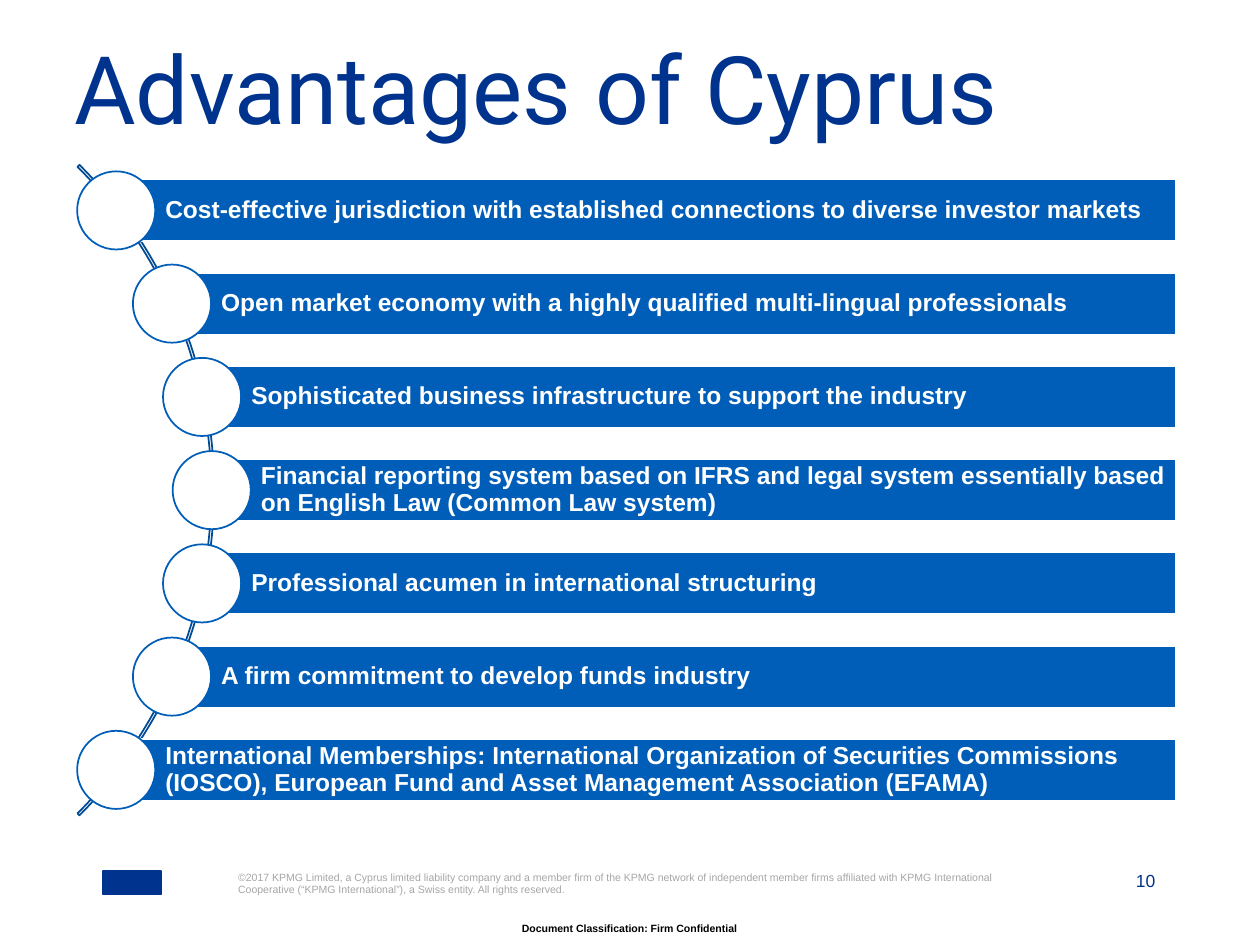
import math

import pptx
import pptx.dml.color
import pptx.enum.shapes
import pptx.enum.text
import pptx.util

Inches = pptx.util.Inches
Pt = pptx.util.Pt
RGBColor = pptx.dml.color.RGBColor
Shape = pptx.enum.shapes.MSO_SHAPE
Align = pptx.enum.text.PP_ALIGN
Anchor = pptx.enum.text.MSO_ANCHOR

NAVY = RGBColor(0x00, 0x33, 0x8D)
BLUE = RGBColor(0x00, 0x5E, 0xB8)
ARC_BLUE = RGBColor(0x00, 0x4B, 0x93)
GREY = RGBColor(0xA6, 0xA6, 0xA6)
BLACK = RGBColor(0x00, 0x00, 0x00)
WHITE = RGBColor(0xFF, 0xFF, 0xFF)

ADVANTAGES = [
    "Cost-effective jurisdiction with established connections to diverse investor markets",
    "Open market economy with a highly qualified multi-lingual professionals",
    "Sophisticated business infrastructure to support the industry",
    "Financial reporting system based on IFRS and legal system essentially based "
    "on English Law (Common Law system)",
    "Professional acumen in international structuring",
    "A firm commitment to develop funds industry",
    "International Memberships: International Organization of Securities Commissions "
    "(IOSCO), European Fund and Asset Management Association (EFAMA)",
]
COPYRIGHT = (
    "©2017 KPMG Limited, a Cyprus limited liability company and a member firm of the "
    "KPMG network of independent member firms affiliated with KPMG International "
    "Cooperative (“KPMG International”), a Swiss entity. All rights reserved."
)

ARC_X, ARC_Y, ARC_RADIUS = -1.95, 3.89, 3.65
DOT_ORBIT = 3.63
ROW_PITCH = 0.74
BAR_RIGHT, BAR_HEIGHT = 9.33, 0.49
DOT_SIZE = 0.62


def set_frame(frame, anchor, insets=(0, 0, 0, 0)):
    frame.word_wrap = True
    frame.auto_size = pptx.enum.text.MSO_AUTO_SIZE.NONE
    frame.vertical_anchor = anchor
    frame.margin_left, frame.margin_top, frame.margin_right, frame.margin_bottom = map(
        Inches, insets
    )


def write(paragraph, text, size, color, bold=False, font="Arial", align=Align.LEFT):
    paragraph.alignment = align
    run = paragraph.add_run()
    run.text = text
    run.font.name = font
    run.font.size = Pt(size)
    run.font.bold = bold
    run.font.color.rgb = color


def add_title(slide, text):
    title = slide.shapes.title
    title.left, title.top = Inches(0.53), Inches(0.44)
    title.width, title.height = Inches(8.35), Inches(0.57)
    set_frame(title.text_frame, Anchor.TOP, (0.06, 0.04, 0, 0))
    paragraph = title.text_frame.paragraphs[0]
    paragraph.line_spacing = 0.7
    write(paragraph, text, 54, NAVY, font="Roboto")


def add_label(slide, box, text, size, color, anchor=Anchor.TOP, **style):
    label = slide.shapes.add_textbox(*map(Inches, box))
    set_frame(label.text_frame, anchor)
    write(label.text_frame.paragraphs[0], text, size, color, **style)


def add_outlined(slide, preset, box, line, fill=None):
    shape = slide.shapes.add_shape(preset, *map(Inches, box))
    shape.shadow.inherit = False
    if fill is None:
        shape.fill.background()
    else:
        shape.fill.solid()
        shape.fill.fore_color.rgb = fill
    shape.line.color.rgb = line
    shape.line.width = Pt(1)
    return shape


def add_arc(slide):
    box = (ARC_X - ARC_RADIUS, ARC_Y - ARC_RADIUS, 2 * ARC_RADIUS, 2 * ARC_RADIUS)
    arc = add_outlined(slide, Shape.BLOCK_ARC, box, ARC_BLUE)
    # Start angle, end angle and relative thickness.
    for index, value in enumerate((189, 27, 0.003)):
        arc.adjustments[index] = value


def add_advantage(slide, offset, text):
    """Add a bar and its dot, the dot centred on the arc at a vertical offset."""
    x = ARC_X + math.sqrt(DOT_ORBIT**2 - offset**2)
    y = ARC_Y + offset
    bar_box = (x, y - BAR_HEIGHT / 2, BAR_RIGHT - x, BAR_HEIGHT)
    bar = add_outlined(slide, Shape.RECTANGLE, bar_box, WHITE, BLUE)
    set_frame(bar.text_frame, Anchor.MIDDLE, (0.39, 0.04, 0.04, 0.04))
    paragraph = bar.text_frame.paragraphs[0]
    paragraph.line_spacing = 0.9
    write(paragraph, text, 14, WHITE, bold=True)
    dot_box = (x - DOT_SIZE / 2, y - DOT_SIZE / 2, DOT_SIZE, DOT_SIZE)
    add_outlined(slide, Shape.OVAL, dot_box, BLUE, WHITE)


def add_footer(slide):
    add_outlined(slide, Shape.RECTANGLE, (0.82, 6.91, 0.46, 0.19), NAVY, NAVY)
    add_label(slide, (7.86, 6.91, 1.31, 0.16), "10", 10, NAVY,
              anchor=Anchor.BOTTOM, align=Align.RIGHT)
    add_label(slide, (2.02, 7.32, 5.95, 0.1), "Document Classification: Firm Confidential",
              6, BLACK, bold=True, align=Align.CENTER)
    add_label(slide, (1.89, 6.91, 6.36, 0.41), COPYRIGHT, 6, GREY)


def main():
    presentation = pptx.Presentation()
    presentation.slide_width, presentation.slide_height = Inches(10), Inches(7.5)
    slide = presentation.slides.add_slide(presentation.slide_layouts[5])
    add_footer(slide)
    add_title(slide, "Advantages of Cyprus")
    add_arc(slide)
    middle = len(ADVANTAGES) // 2
    for row, text in enumerate(ADVANTAGES):
        add_advantage(slide, (row - middle) * ROW_PITCH, text)
    presentation.save("out.pptx")


if __name__ == "__main__":
    main()
